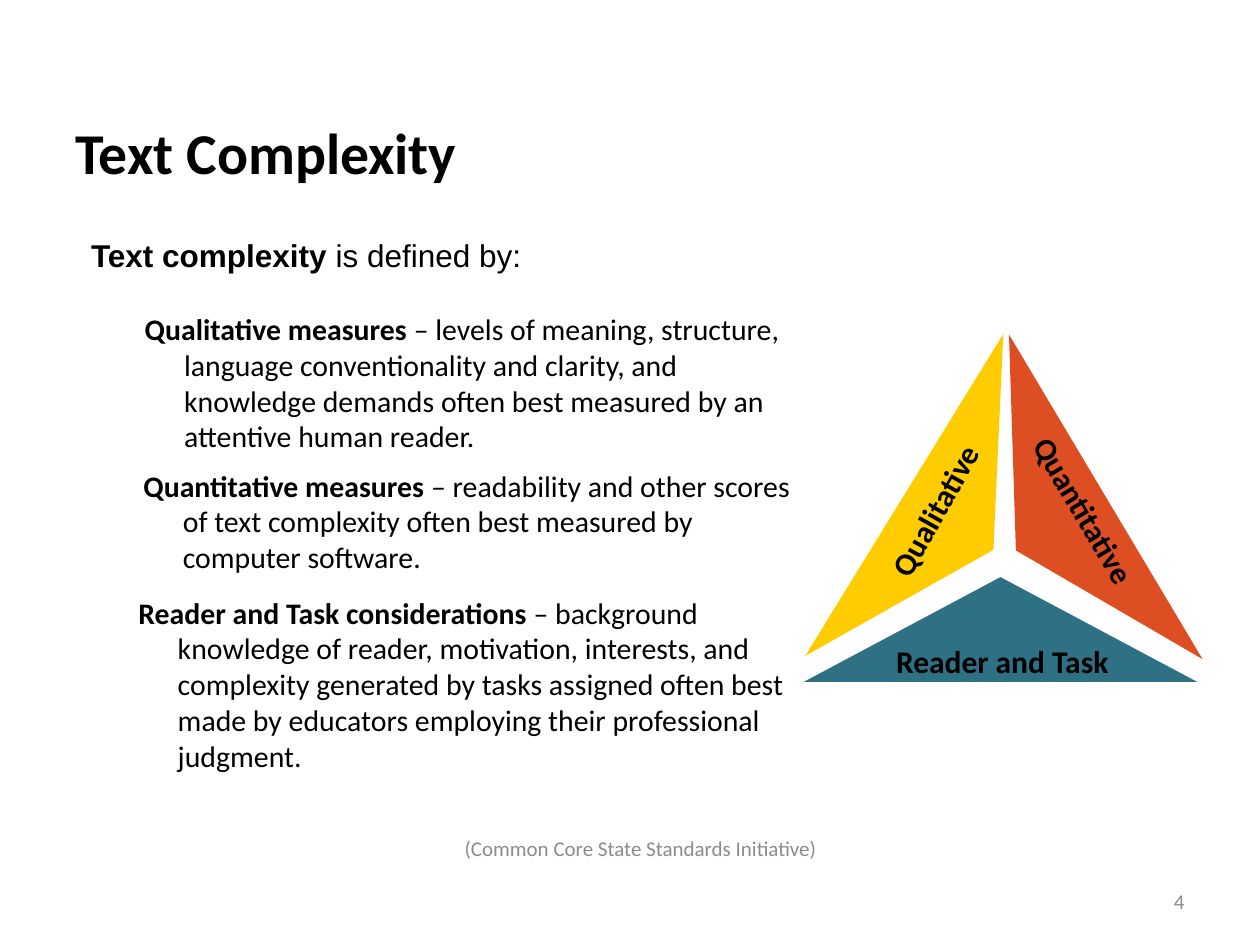
from dataclasses import dataclass

import pptx
import pptx.dml.color
import pptx.enum.shapes
import pptx.enum.text
import pptx.util

Pt = pptx.util.Pt
RGB = pptx.dml.color.RGBColor
ALIGN = pptx.enum.text.PP_ALIGN
ANCHOR = pptx.enum.text.MSO_ANCHOR


@dataclass(frozen=True)
class Theme:
    font: str = "Calibri"
    lead_font: str = "Arial"
    ink: str = "000000"
    muted: str = "8C8C8C"
    yellow: str = "FFCC00"
    red: str = "DD4F23"
    teal: str = "2E7084"
    title: float = 33
    label: float = 18
    body: float = 17
    small: float = 12


THEME = Theme()


@dataclass(frozen=True)
class Box:
    left: float
    top: float
    width: float
    height: float
    rotation: float = 0

    def lengths(self) -> tuple:
        return tuple(Pt(v) for v in (self.left, self.top, self.width, self.height))


@dataclass(frozen=True)
class Run:
    text: str
    bold: bool = False


@dataclass(frozen=True)
class Measure:
    name: str
    description: str
    label: str
    color: str
    triangle: Box
    label_box: Box
    text_box: Box


def add_text(shapes, box: Box, runs: list[Run], size: float, *,
             font: str = THEME.font, color: str = THEME.ink,
             align=ALIGN.LEFT, anchor=ANCHOR.TOP,
             margin: float = 0, indent: float = 0) -> None:
    sp = shapes.add_textbox(*box.lengths())
    sp.rotation = box.rotation
    tf = sp.text_frame
    tf.word_wrap = True
    tf.vertical_anchor = anchor
    p = tf.paragraphs[0]
    p.alignment = align
    # Left margin and first-line indent
    pPr = p._p.get_or_add_pPr()
    pPr.set("marL", str(Pt(margin)))
    pPr.set("indent", str(Pt(indent)))
    for run in runs:
        r = p.add_run()
        r.text = run.text
        r.font.name = font
        r.font.size = Pt(size)
        r.font.bold = run.bold
        r.font.color.rgb = RGB.from_string(color)


def add_measure(s, m: Measure) -> None:
    shapes = s.shapes.add_group_shape().shapes
    sp = shapes.add_shape(pptx.enum.shapes.MSO_SHAPE.ISOSCELES_TRIANGLE,
                          *m.triangle.lengths())
    sp.rotation = m.triangle.rotation
    sp.shadow.inherit = False
    sp.fill.solid()
    sp.fill.fore_color.rgb = RGB.from_string(m.color)
    sp.line.fill.background()
    add_text(shapes, m.label_box, [Run(m.label, True)], THEME.label,
             align=ALIGN.CENTER)
    add_text(shapes, m.text_box, [Run(m.name + " ", True), Run(m.description)],
             THEME.body, margin=58.5, indent=-22.5)


MEASURES = [
    Measure("Qualitative measures",
            "– levels of meaning, structure, language conventionality and clarity, "
            "and knowledge demands often best measured by an attentive human reader.",
            "Qualitative", THEME.yellow,
            Box(434.2, 268.6, 216, 59.8, 121.6),
            Box(473.8, 277.2, 120.2, 28.8, 299.2),
            Box(39.6, 174.2, 421.2, 90)),
    Measure("Quantitative measures",
            "– readability and other scores of text complexity often best measured "
            "by computer software.",
            "Quantitative", THEME.red,
            Box(498.2, 269.3, 216, 59.8, 239.2),
            Box(559.4, 277.2, 120.2, 28.8, 59.3),
            Box(38.9, 263.5, 420.5, 69.1)),
    Measure("Reader and Task considerations",
            "– background knowledge of reader, motivation, interests, and complexity "
            "generated by tasks assigned often best made by educators employing "
            "their professional judgment.",
            "Reader and Task", THEME.teal,
            Box(459.4, 329.8, 224.6, 59.8),
            Box(488.9, 363.6, 167.8, 28.8),
            Box(36, 336.2, 420.5, 110.2)),
]


def main() -> None:
    prs = pptx.Presentation()
    prs.slide_width, prs.slide_height = Pt(720), Pt(540)
    s = prs.slides.add_slide(prs.slide_layouts[6])

    # Title and lead-in
    add_text(s.shapes, Box(0, 36, 707.8, 101.5), [Run("Text Complexity", True)],
             THEME.title, anchor=ANCHOR.MIDDLE, margin=36)
    add_text(s.shapes, Box(36, 131.5, 648, 28),
             [Run("Text complexity ", True), Run("is defined by:")],
             THEME.label, font=THEME.lead_font, margin=31.5, indent=-22.5)

    # Three measures, each with its side of the triangle
    for m in MEASURES:
        add_measure(s, m)

    # Source and slide number
    add_text(s.shapes, Box(48.2, 473.8, 635.8, 46.8),
             [Run("(Common Core State Standards Initiative)")],
             THEME.small, color=THEME.muted, align=ALIGN.CENTER)
    add_text(s.shapes, Box(516.2, 500.4, 167.8, 28.8), [Run("4")],
             THEME.small, color=THEME.muted, align=ALIGN.RIGHT,
             anchor=ANCHOR.MIDDLE)

    prs.save("out.pptx")


if __name__ == "__main__":
    main()
